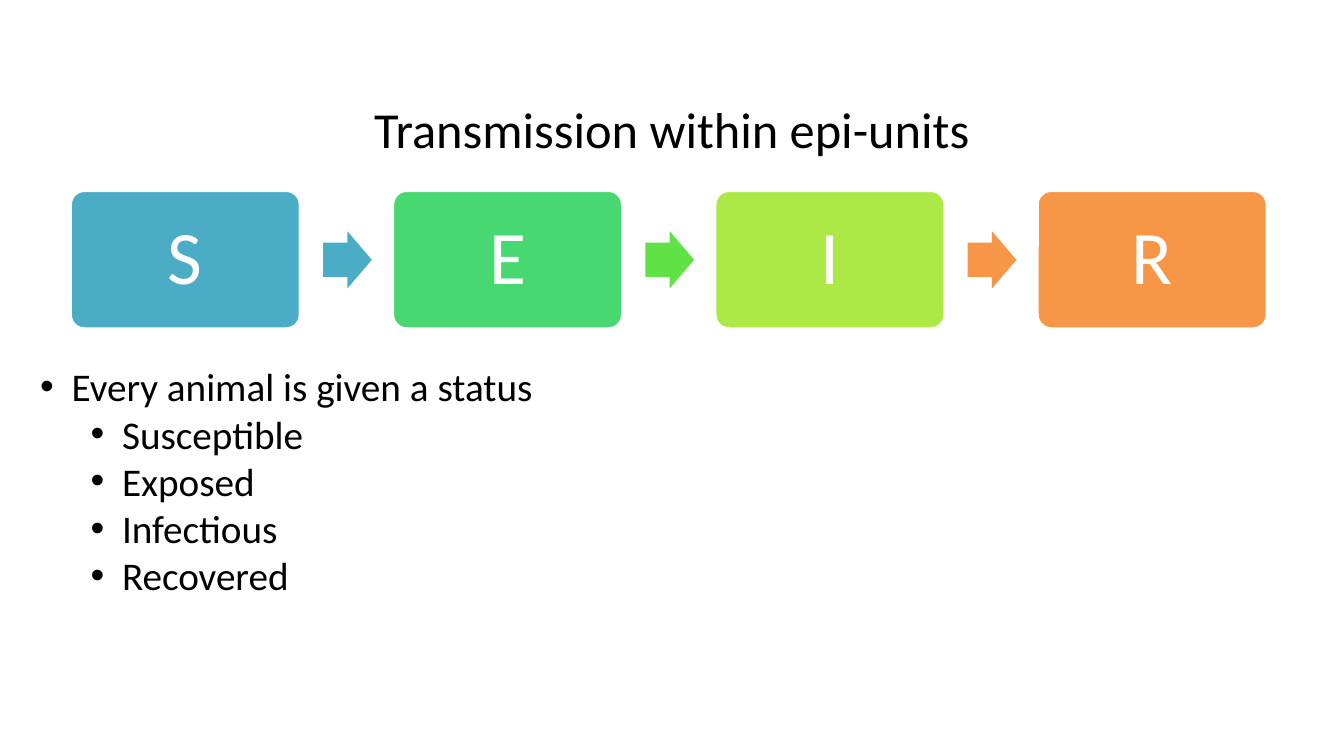
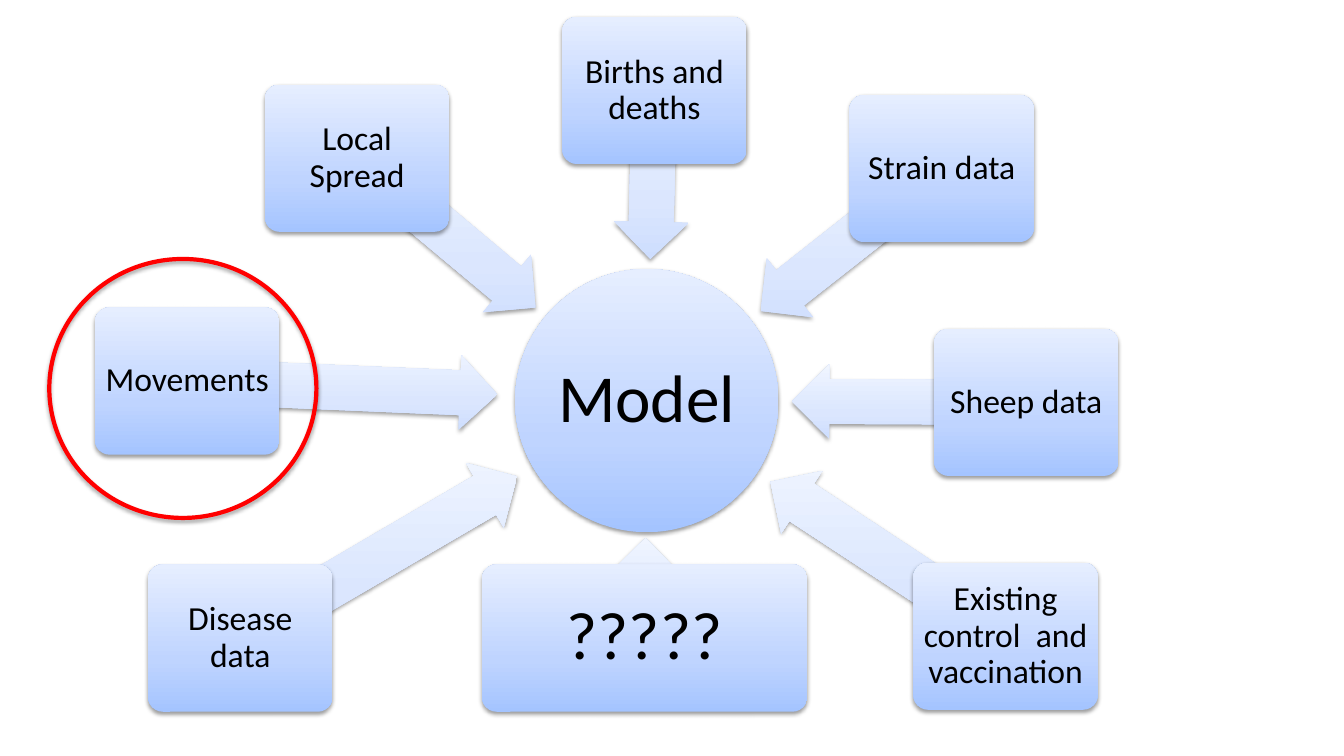
from math import atan2, degrees, hypot

from lxml.etree import SubElement
from pptx import Presentation
from pptx.dml.color import RGBColor
from pptx.enum.shapes import MSO_SHAPE as Preset
from pptx.enum.text import MSO_ANCHOR as Anchor, PP_ALIGN as Align
from pptx.oxml.ns import qn
from pptx.util import Pt

COLORS = {
    "black": "000000",
    "white": "FFFFFF",
    "teal": "4BACC6",
    "green": "47D872",
    "bright_green": "60E146",
    "lime": "ACE946",
    "orange": "F79646",
    "red": "FF0000",
}
FONT = "Calibri"
BOX_GRADIENT = [(0, "A4C4FF"), (35, "BFD4FF"), (100, "E6EEFF")]
ARROW_GRADIENT = [(0, "CDDDFE"), (35, "DBE6FE"), (100, "F0F5FF")]

HUB_X, HUB_Y, HUB_RADIUS = 462, 286.2, 94
INPUT_WIDTH, INPUT_HEIGHT = 131.8, 105.2
ARROW_HEIGHT = 53.3
ARROW_SHARE = 0.945


def color(name):
    return RGBColor.from_string(COLORS[name])


def add_bullet(para, indent, hanging):
    props = para._p.get_or_add_pPr()
    props.set("marL", str(Pt(indent)))
    props.set("indent", str(Pt(-hanging)))
    SubElement(props, qn("a:buFont"), typeface="Arial")
    SubElement(props, qn("a:buChar"), char="•")


def write(frame, text, size=24, fill="black", align=Align.CENTER,
          anchor=Anchor.MIDDLE, inset=3.6, spacing=None, levels=None):
    frame.word_wrap = True
    frame.vertical_anchor = anchor
    frame.margin_left = frame.margin_right = Pt(inset)
    frame.margin_top = frame.margin_bottom = Pt(min(inset, 3.6))
    for index, line in enumerate(text.split("\n")):
        para = frame.add_paragraph() if index else frame.paragraphs[0]
        para.alignment = align
        if spacing:
            para.line_spacing = spacing
        if levels:
            para.level = levels[index]
            add_bullet(para, 22.5 + 36 * levels[index], 22.5)
        span = para.add_run()
        span.text = line
        span.font.name = FONT
        span.font.size = Pt(size)
        span.font.color.rgb = color(fill)


def add_text(page, left, top, width, height, text, **style):
    box = page.shapes.add_textbox(Pt(left), Pt(top), Pt(width), Pt(height))
    write(box.text_frame, text, **style)


def add_shape(page, preset, left, top, width, height, fill=None, line=None,
              line_width=2, adjustments=()):
    shape = page.shapes.add_shape(preset, Pt(left), Pt(top), Pt(width), Pt(height))
    for index, value in enumerate(adjustments):
        shape.adjustments[index] = value
    if fill:
        shape.fill.solid()
        shape.fill.fore_color.rgb = color(fill)
    else:
        shape.fill.background()
    if line:
        shape.line.color.rgb = color(line)
        shape.line.width = Pt(line_width)
    else:
        shape.line.fill.background()
    shape.shadow.inherit = False
    return shape


def add_gradient(shape, stops):
    props = shape.element.spPr
    gradient = SubElement(props, qn("a:gradFill"), rotWithShape="0")
    stop_list = SubElement(gradient, qn("a:gsLst"))
    for position, value in stops:
        stop = SubElement(stop_list, qn("a:gs"), pos=str(position * 1000))
        SubElement(stop, qn("a:srgbClr"), val=value)
    SubElement(gradient, qn("a:lin"), ang="16200000", scaled="0")
    props.replace(props.find(qn("a:noFill")), gradient)


def add_shadow(shape, distance=1.6, opacity=38):
    effects = shape.element.spPr.find(qn("a:effectLst"))
    shadow = SubElement(effects, qn("a:outerShdw"), blurRad=str(Pt(3.1)),
                        dist=str(Pt(distance)), dir="5400000", rotWithShape="0")
    tint = SubElement(shadow, qn("a:srgbClr"), val=COLORS["black"])
    SubElement(tint, qn("a:alpha"), val=str(opacity * 1000))


def add_soft_shape(page, preset, left, top, width, height, stops, adjustments=()):
    shape = add_shape(page, preset, left, top, width, height, adjustments=adjustments)
    add_gradient(shape, stops)
    add_shadow(shape)
    return shape


def add_stage(page, left, letter, fill):
    box = add_shape(page, Preset.ROUNDED_RECTANGLE, left, 136.2, 164, 98.6,
                    fill=fill, line="white", adjustments=[0.1])
    write(box.text_frame, letter, size=54, fill="white", spacing=0.9)


def add_input(page, text, left, top, width=INPUT_WIDTH, size=24):
    center_x, center_y = left + width / 2, top + INPUT_HEIGHT / 2
    away_x, away_y = center_x - HUB_X, center_y - HUB_Y
    distance = hypot(away_x, away_y)
    length = ARROW_SHARE * (distance - HUB_RADIUS)
    middle = 1 - length / 2 / distance
    arrow = add_soft_shape(page, Preset.LEFT_ARROW,
                           HUB_X + away_x * middle - length / 2,
                           HUB_Y + away_y * middle - ARROW_HEIGHT / 2,
                           length, ARROW_HEIGHT, ARROW_GRADIENT, [0.6, 0.5])
    arrow.rotation = degrees(atan2(away_y, away_x)) % 360
    box = add_soft_shape(page, Preset.ROUNDED_RECTANGLE, left, top, width,
                         INPUT_HEIGHT, BOX_GRADIENT, [0.1])
    write(box.text_frame, text, size=size, spacing=0.9)


def build_transmission(page):
    stages = [("S", "teal", "teal"), ("E", "green", "bright_green"),
              ("I", "lime", "orange"), ("R", "orange", None)]
    for index, (letter, fill, arrow_fill) in enumerate(stages):
        left = 50.4 + 230.2 * index
        add_stage(page, left, letter, fill)
        if arrow_fill:
            add_shape(page, Preset.RIGHT_ARROW, left + 180.4, 165.2, 34.8, 40.8,
                      fill=arrow_fill, adjustments=[0.6, 0.5])
    add_text(page, 21.6, 255.6, 632, 177,
             "Every animal is given a status\nSusceptible\nExposed\nInfectious\nRecovered",
             size=28, align=Align.LEFT, anchor=Anchor.TOP, inset=7.2,
             levels=[0, 1, 1, 1, 1])
    add_text(page, 48, 46.8, 864, 90, "Transmission within epi-units",
             size=36, inset=7.2)


def build_model(page):
    hub = add_soft_shape(page, Preset.OVAL, HUB_X - HUB_RADIUS, HUB_Y - HUB_RADIUS,
                         2 * HUB_RADIUS, 2 * HUB_RADIUS, BOX_GRADIENT)
    write(hub.text_frame, "Model", size=48, inset=2.2, spacing=0.9)
    inputs = [
        ("Disease data", 105.8, 403.2),
        ("Movements", 67.8, 219.6),
        ("Local Spread", 189.2, 60.4),
        ("Births and deaths", 401.6, 12),
        ("Strain data", 606.8, 67.8),
        ("Sheep data", 667.2, 234.8),
        ("Existing control  and vaccination", 652.4, 401.8),
    ]
    for text, left, top in inputs:
        add_input(page, text, left, top)
    add_input(page, "?????", 344.2, 403.2, width=232.4, size=48)
    ring = add_shape(page, Preset.OVAL, 35.2, 185, 190.8, 185,
                     line="red", line_width=3)
    add_shadow(ring, distance=1.8, opacity=35)


def main():
    deck = Presentation()
    deck.slide_width, deck.slide_height = Pt(960), Pt(540)
    for build in (build_transmission, build_model):
        build(deck.slides.add_slide(deck.slide_layouts[6]))
    deck.save("out.pptx")


if __name__ == "__main__":
    main()
